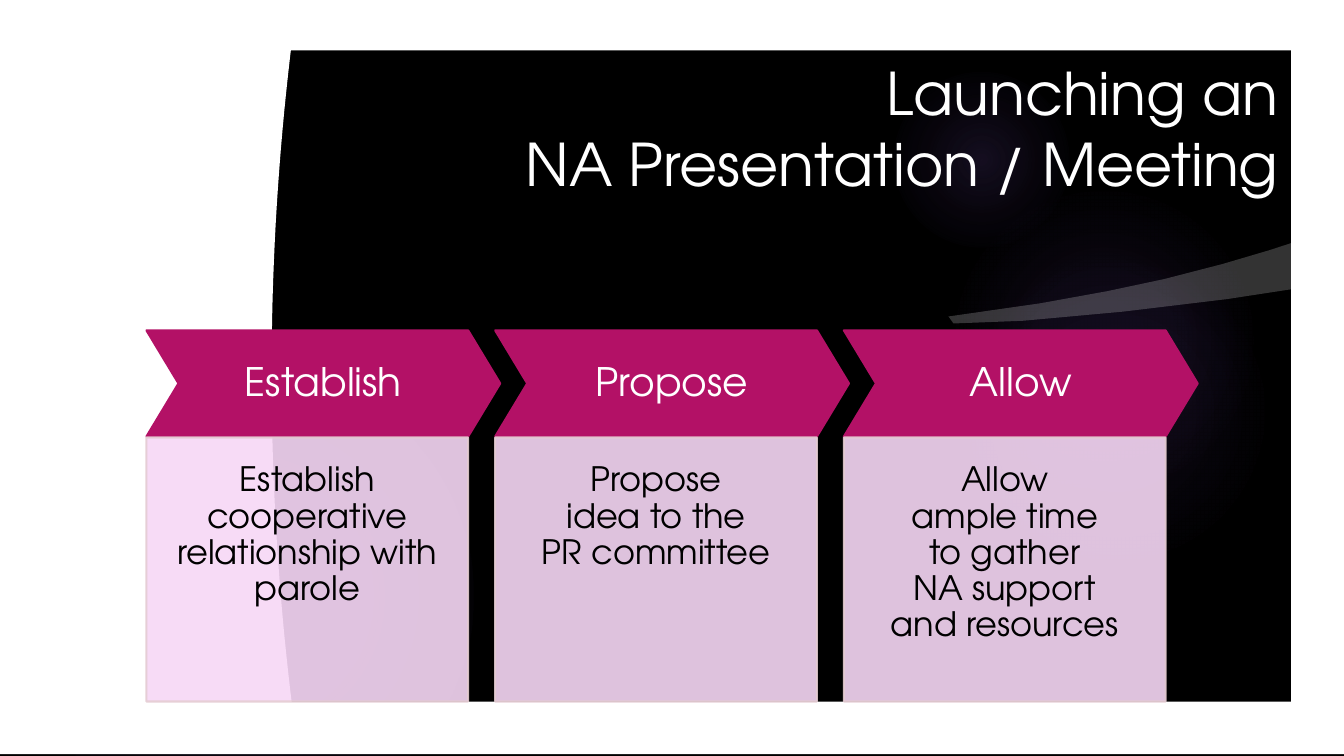
from dataclasses import dataclass

import lxml.etree
import pptx
import pptx.dml.color
import pptx.enum.shapes
import pptx.enum.text
import pptx.oxml.ns
import pptx.util

Pt = pptx.util.Pt
SHAPE = pptx.enum.shapes.MSO_SHAPE
ALIGN = pptx.enum.text.PP_ALIGN
ANCHOR = pptx.enum.text.MSO_ANCHOR
qn = pptx.oxml.ns.qn

FONT = "TeX Gyre Adventor"
COLORS = {
    "black": "000000",
    "white": "FFFFFF",
    "glow": "9B6BF2",
    "magenta": "B31166",
    "pink": "F7D8F6",
    "pink_edge": "E5CCD3",
}
Points = list[tuple[float, float]]


@dataclass
class Glow:
    left: float
    top: float
    size: float
    stops: list[tuple[int, int]]  # position and opacity, in percent


@dataclass
class Step:
    heading: str
    detail: str


GLOWS = [
    Glow(677.5, 131.8, 221.8, [(0, 7), (36, 6), (69, 0), (100, 0)]),
    Glow(8.6, 260.6, 329.8, [(0, 10), (36, 9), (75, 0), (100, 0)]),
    Glow(686.2, 182.9, 221.8, [(0, 6), (36, 5), (69, 0), (100, 0)]),
    Glow(637.9, 51.1, 126, [(0, 13), (36, 6), (73, 0), (100, 0)]),
]
STEPS = [
    Step("Establish", "Establish cooperative relationship with parole"),
    Step("Propose", "Propose\nidea to the\nPR committee"),
    Step("Allow", "Allow\nample time\nto gather\nNA support\nand resources"),
]
STEP_LEFT, STEP_PITCH = 104.6, 249.1
HEADING_TOP, HEADING_W, HEADING_H, NOTCH = 236, 252.7, 75.8, 22.9
DETAIL_TOP, DETAIL_W, DETAIL_H = 312.5, 229.8, 188.6


def rgb(name: str) -> pptx.dml.color.RGBColor:
    return pptx.dml.color.RGBColor.from_string(COLORS[name])


def add_alpha(color, percent: int) -> None:
    lxml.etree.SubElement(color, qn("a:alpha"), val=str(percent * 1000))


def paint(sp, fill: str, line: str | None = None, opacity: int = 100) -> None:
    sp.shadow.inherit = False
    sp.fill.solid()
    sp.fill.fore_color.rgb = rgb(fill)
    if line:
        sp.line.color.rgb = rgb(line)
        sp.line.width = Pt(1.5)
    else:
        sp.line.fill.background()
    if opacity < 100:
        for color in sp._element.spPr.iter(qn("a:srgbClr")):
            add_alpha(color, opacity)


def write(sp, text: str, size: float, color: str, align, anchor,
          margins: tuple[float, float, float, float], spacing: float = 1.0) -> None:
    tf = sp.text_frame
    tf.word_wrap = True
    tf.vertical_anchor = anchor
    tf.margin_left, tf.margin_top, tf.margin_right, tf.margin_bottom = map(Pt, margins)
    p = tf.paragraphs[0]
    p.text = text
    p.alignment = align
    p.line_spacing = spacing
    for r in p.runs:
        r.font.name = FONT
        r.font.size = Pt(size)
        r.font.color.rgb = rgb(color)


def add_outline(s, contours: list[Points], fill: str, opacity: int = 100) -> None:
    builder = None
    for contour in contours:
        (x, y), *rest = [(Pt(px), Pt(py)) for px, py in contour]
        if builder is None:
            builder = s.shapes.build_freeform(x, y)
        else:
            builder.move_to(x, y)
        builder.add_line_segments(rest, close=True)
    paint(builder.convert_to_shape(), fill, opacity=opacity)


def add_glow(s, glow: Glow) -> None:
    sp = s.shapes.add_shape(SHAPE.OVAL, Pt(glow.left), Pt(glow.top),
                            Pt(glow.size), Pt(glow.size))
    paint(sp, "glow")
    spPr = sp._element.spPr
    grad = lxml.etree.Element(qn("a:gradFill"), rotWithShape="1")
    stops = lxml.etree.SubElement(grad, qn("a:gsLst"))
    for position, opacity in glow.stops:
        stop = lxml.etree.SubElement(stops, qn("a:gs"), pos=str(position * 1000))
        add_alpha(lxml.etree.SubElement(stop, qn("a:srgbClr"), val=COLORS["glow"]), opacity)
    radial = lxml.etree.SubElement(grad, qn("a:path"), path="circle")
    lxml.etree.SubElement(radial, qn("a:fillToRect"),
                          l="50000", t="50000", r="50000", b="50000")
    spPr.replace(spPr.find(qn("a:solidFill")), grad)


def add_step(s, step: Step, left: float) -> None:
    sp = s.shapes.add_shape(SHAPE.CHEVRON, Pt(left), Pt(HEADING_TOP),
                            Pt(HEADING_W), Pt(HEADING_H))
    sp.adjustments[0] = NOTCH / HEADING_H
    paint(sp, "magenta", "magenta")
    write(sp, step.heading, 28, "white", ALIGN.CENTER, ANCHOR.MIDDLE, (0, 0, 0, 0), 0.9)

    sp = s.shapes.add_shape(SHAPE.RECTANGLE, Pt(left), Pt(DETAIL_TOP),
                            Pt(DETAIL_W), Pt(DETAIL_H))
    paint(sp, "pink", "pink_edge", opacity=90)
    write(sp, step.detail, 24, "black", ALIGN.CENTER, ANCHOR.TOP, (18, 18, 18, 36), 0.9)


def box(left: float, top: float, right: float, bottom: float) -> Points:
    return [(left, top), (left, bottom), (right, bottom), (right, top)]


def main() -> None:
    prs = pptx.Presentation()
    prs.slide_width, prs.slide_height = Pt(960), Pt(540)
    s = prs.slides.add_slide(prs.slide_layouts[6])
    s.background.fill.solid()
    s.background.fill.fore_color.rgb = rgb("black")

    # Backdrop: glows and swoosh
    for glow in GLOWS:
        add_glow(s, glow)
    swoosh_top = [(677.5, 226.1), (743, 216.7), (790.6, 208.1), (831.6, 199.4),
                  (873.4, 188.6), (907.2, 178.6), (931.7, 170.6)]
    swoosh_bottom = [(936.7, 204.5), (876.5, 213.7), (801.9, 222.7),
                     (730.7, 229.2), (681.1, 231.1)]
    add_outline(s, [swoosh_top + swoosh_bottom], "white", opacity=20)

    # White side panel with a bowed edge, then the white frame
    half = 266.4
    bow = [(194 + 18.4 * (i / 20) ** 2, half + half * i / 20) for i in range(-20, 21)]
    add_outline(s, [[(0, 0), *bow, (0, 2 * half)]], "white")
    add_outline(s, [box(0, 0, 960, 538.6), box(37.4, 36, 922.3, 501.1)], "white")

    # Title
    title = s.shapes.add_textbox(Pt(225.4), Pt(36), Pt(694.8), Pt(110.2))
    write(title, "Launching an\nNA Presentation / Meeting", 42, "white",
          ALIGN.RIGHT, ANCHOR.MIDDLE, (7.2, 3.6, 7.2, 3.6))

    # Steps
    for i, step in enumerate(STEPS):
        add_step(s, step, STEP_LEFT + i * STEP_PITCH)

    prs.save("out.pptx")


if __name__ == "__main__":
    main()
